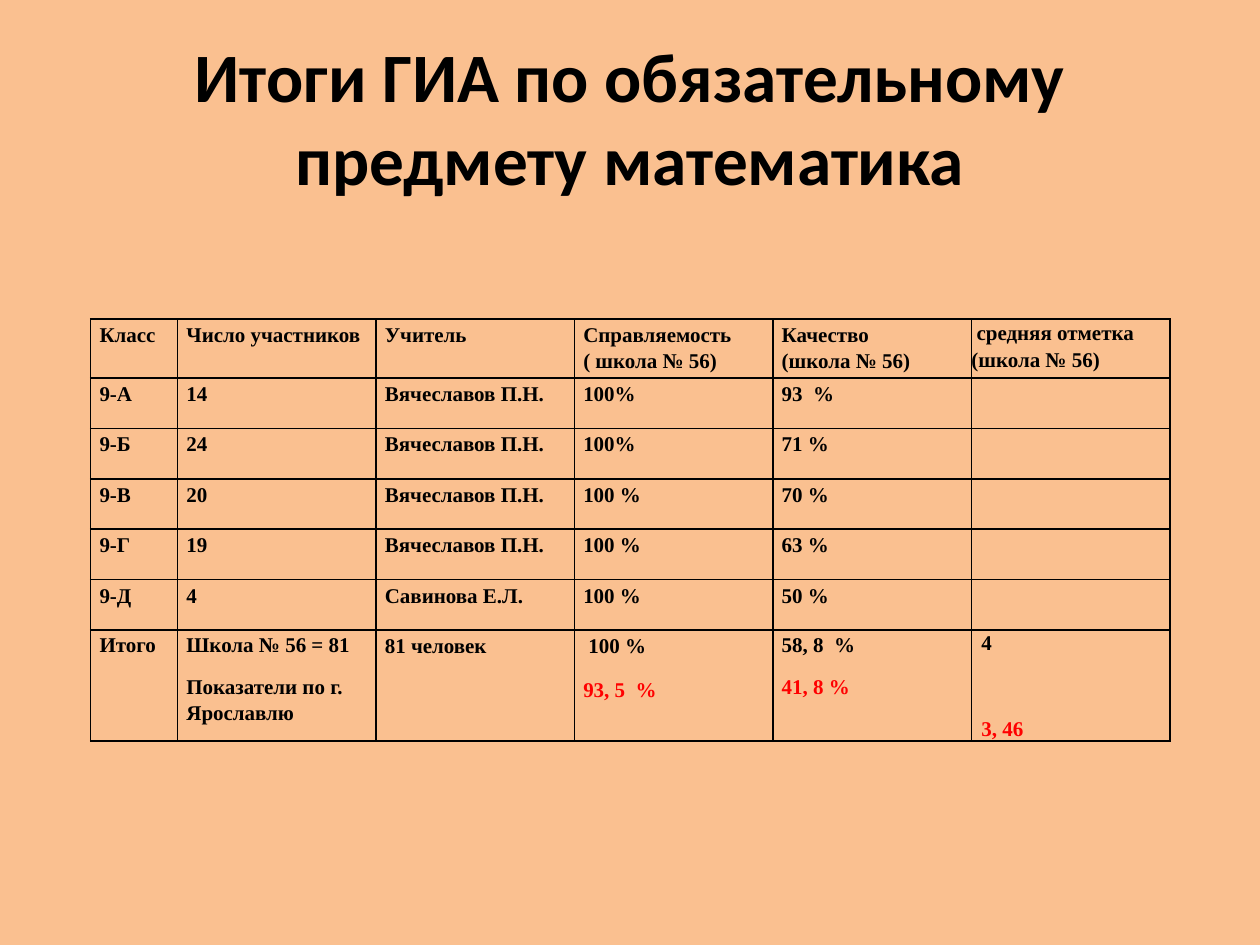
import pptx
import pptx.util
import pptx.dml.color
import pptx.enum.text
import pptx.oxml
import pptx.oxml.ns
from pptx.util import Inches

COLORS = {"background": "FAC090", "text": "000000", "city": "FF0000"}
HEADERS = ["Класс", "Число участников", "Учитель", "Справляемость\v( школа № 56)",
           "Качество\v(школа № 56)", " средняя отметка\v(школа № 56)"]
CLASSES = [
    ["9-А", "14", "Вячеславов П.Н.", "100%", "93  %", ""],
    ["9-Б", "24", "Вячеславов П.Н.", "100%", "71 %", ""],
    ["9-В", "20", "Вячеславов П.Н.", "100 %", "70 %", ""],
    ["9-Г", "19", "Вячеславов П.Н.", "100 %", "63 %", ""],
    ["9-Д", "4", "Савинова Е.Л.", "100 %", "50 %", ""],
]
TOTALS = ["Итого", "Школа № 56 = 81\nПоказатели по г. Ярославлю", "81 человек",
          " 100 %\n93, 5  %", "58, 8  %\n41, 8 %", "4\n3, 46"]
COL_WIDTHS = [0.69] + [1.575] * 5
ROW_HEIGHTS = [0.44] + [0.4] * 5 + [0.88]


def rgb(name):
    return pptx.dml.color.RGBColor.from_string(COLORS[name])


def format_paragraph(p, font, size, color="text"):
    for r in p.runs:
        r.font.name = font
        r.font.size = pptx.util.Pt(size)
        r.font.bold = True
        r.font.color.rgb = rgb(color)


def add_title(s, left, top, width, height):
    tb = s.shapes.add_textbox(Inches(left), Inches(top), Inches(width), Inches(height))
    tf = tb.text_frame
    tf.word_wrap = True
    tf.vertical_anchor = pptx.enum.text.MSO_ANCHOR.MIDDLE
    tf.text = "Итоги ГИА по обязательному предмету математика"
    p = tf.paragraphs[0]
    p.alignment = pptx.enum.text.PP_ALIGN.CENTER
    format_paragraph(p, "Calibri", 39.6)


def set_borders(cell):
    tc_pr = cell._tc.get_or_add_tcPr()
    for side in "LRTB":
        tc_pr.append(pptx.oxml.parse_xml(
            f'<a:ln{side} {pptx.oxml.ns.nsdecls("a")} w="12700"><a:solidFill>'
            f'<a:srgbClr val="{COLORS["text"]}"/></a:solidFill></a:ln{side}>'))


def fill_cell(cell, text, is_total, is_last):
    set_borders(cell)
    cell.fill.background()
    side = 0.07
    if is_last:
        side = 0.08 if is_total else 0
    cell.margin_left = Inches(side)
    cell.margin_right = Inches(0 if is_last else side)
    cell.margin_top = Inches(0 if is_last else 0.01)
    cell.margin_bottom = 0
    cell.text_frame.text = text
    for i, p in enumerate(cell.text_frame.paragraphs):
        p.font.size = pptx.util.Pt(12)
        p.line_spacing = 1.15
        p.space_after = pptx.util.Pt(10)
        is_city = is_total and i == 1 and "%" in text or is_last and i == 1
        format_paragraph(p, "Times New Roman", 12, "city" if is_city else "text")


def add_results(s, left, top):
    rows = [HEADERS] + CLASSES + [TOTALS]
    frame = s.shapes.add_table(len(rows), len(HEADERS), Inches(left), Inches(top),
                               Inches(sum(COL_WIDTHS)), Inches(sum(ROW_HEIGHTS)))
    table = frame.table
    table.first_row = False
    table.horz_banding = False
    for column, width in zip(table.columns, COL_WIDTHS):
        column.width = Inches(width)
    for row, height in zip(table.rows, ROW_HEIGHTS):
        row.height = Inches(height)
    for i, values in enumerate(rows):
        for j, text in enumerate(values):
            fill_cell(table.cell(i, j), text, values is TOTALS, j == len(values) - 1)
    total_row = len(rows) - 1
    for j in (0, 1, 4, 5):
        for p in table.cell(total_row, j).text_frame.paragraphs:
            p.line_spacing = pptx.util.Pt(14.5)
    table.cell(total_row, 2).text_frame.paragraphs[0].space_after = pptx.util.Pt(0)
    table.cell(total_row, 5).text_frame.paragraphs[0].space_after = pptx.util.Pt(34.5)


def main():
    prs = pptx.Presentation()
    prs.slide_width = Inches(10)
    prs.slide_height = Inches(7.5)
    s = prs.slides.add_slide(prs.slide_layouts[6])
    s.background.fill.solid()
    s.background.fill.fore_color.rgb = rgb("background")
    add_title(s, 0.5, 0.3, 9, 1.25)
    add_results(s, 0.72, 2.53)
    prs.save("out.pptx")


if __name__ == "__main__":
    main()
